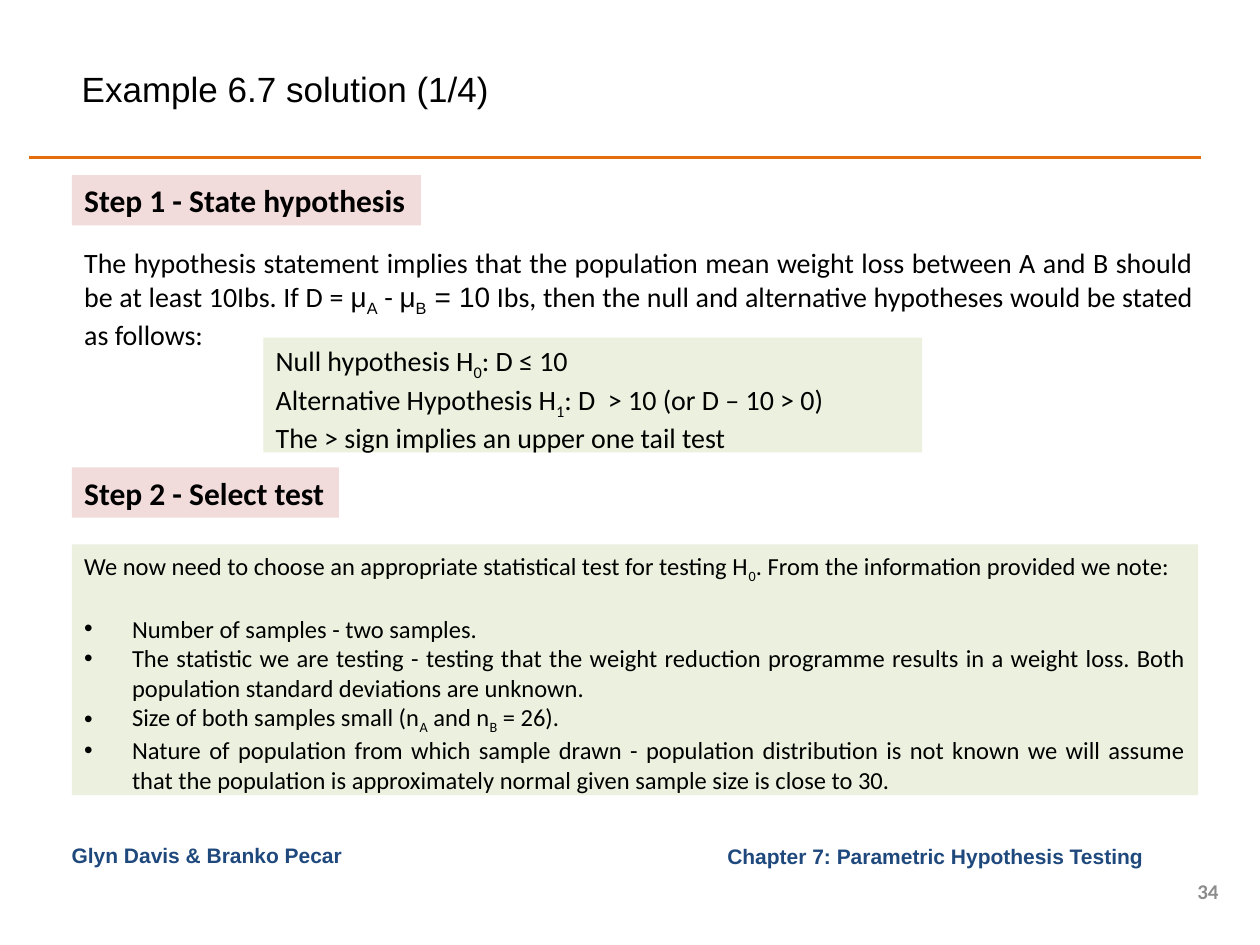
from lxml import etree
from pptx import Presentation, util as u
from pptx.dml.color import RGBColor
from pptx.enum import shapes, text
from pptx.oxml.ns import qn

W, H = 10, 7.5
EDGE = 0.57
INK, NAVY, GREY = "000000", "1F497D", "8C8C8C"
PINK, GREEN, ORANGE = "F2DCDB", "EBF1DE", "E46C0A"
LEFT, RIGHT, JUST = text.PP_ALIGN.LEFT, text.PP_ALIGN.RIGHT, text.PP_ALIGN.JUSTIFY
TOP, MID = text.MSO_ANCHOR.TOP, text.MSO_ANCHOR.MIDDLE

# "|" parts the runs, "_" lowers a run, "^" sets it in Arial
LABELS = [
    ("Chapter 7: Parametric Hypothesis Testing ", (3.75, 6.64, 5.47, 0.31), "Arial", 12, NAVY, True, RIGHT, MID),
    ("Example 6.7 solution (1/4)", (0.55, 0.31, 8.94, 0.78), "Arial", 20, INK, False, LEFT, MID),
    ("34", (9.3, 6.95, 0.47, 0.24), "Calibri", 12, GREY, True, RIGHT, MID),
    ("Glyn Davis & Branko Pecar", (0.47, 6.64, 2.97, 0.31), "Arial", 12, NAVY, True, LEFT, TOP),
]
STEPS = [
    ("Step 1 - State hypothesis", 1.39, 2.77),
    ("Step 2 - Select test", 3.71, 2.12),
]
INTRO = [
    "The hypothesis statement implies that the population mean weight loss between A and B "
    "should be at least 10Ibs. If D = |^μ|^_Α| - |^μ|^_Β|^ = 10| Ibs, then the null and "
    "alternative hypotheses would be stated as follows:",
]
CLAIMS = [
    "Null hypothesis H|_0|: D ≤ 10",
    "Alternative Hypothesis H|_1|: D  > 10 (or D – 10 > 0)",
    "The > sign implies an upper one tail test",
]
LEAD = "We now need to choose an appropriate statistical test for testing H|_0|. From the information provided we note:"
NOTES = [
    "Number of samples - two samples.",
    "The statistic we are testing - testing that the weight reduction programme results in a "
    "weight loss. Both population standard deviations are unknown.",
    "Size of both samples small (n|_A| and n|_B| = 26).",
    "Nature of population from which sample drawn - population distribution is not known we "
    "will assume that the population is approximately normal given sample size is close to 30.",
]


def color(code):
    return RGBColor.from_string(code)


def write(para, line, font, size, ink=INK, bold=False, align=LEFT):
    para.alignment = align
    for part in line.split("|"):
        body = part.lstrip("^_")
        mark = part[:len(part) - len(body)]
        run = para.add_run()
        run.text = body
        run.font.name = "Arial" if "^" in mark else font
        run.font.size = u.Pt(size)
        run.font.bold = bold
        run.font.color.rgb = color(ink)
        if "_" in mark:
            run.font._element.set("baseline", "-25000")


def block(slide, lines, at, font, size, ink=INK, bold=False, align=LEFT,
          anchor=TOP, fill=None, wrap=True):
    place = [u.Inches(n) for n in at]
    if fill:
        box = slide.shapes.add_shape(shapes.MSO_SHAPE.RECTANGLE, *place)
        box.shadow.inherit = False
        box.fill.solid()
        box.fill.fore_color.rgb = color(fill)
        box.line.fill.background()
    else:
        box = slide.shapes.add_textbox(*place)
    frame = box.text_frame
    frame.word_wrap = wrap
    frame.vertical_anchor = anchor
    for i, line in enumerate(lines):
        para = frame.add_paragraph() if i else frame.paragraphs[0]
        write(para, line, font, size, ink, bold, align)
    return frame.paragraphs


def bullet(para):
    props = para._p.get_or_add_pPr()
    step = u.Inches(0.38)
    props.set("marL", str(step))
    props.set("indent", str(-step))
    etree.SubElement(props, qn("a:buFont")).set("typeface", "Arial")
    etree.SubElement(props, qn("a:buChar")).set("char", "•")


def main():
    deck = Presentation()
    deck.slide_width, deck.slide_height = u.Inches(W), u.Inches(H)
    slide = deck.slides.add_slide(deck.slide_layouts[6])

    rule = slide.shapes.add_connector(
        shapes.MSO_CONNECTOR.STRAIGHT, *[u.Inches(n) for n in (0.23, 1.25, 9.53, 1.25)])
    rule.line.color.rgb = color(ORANGE)
    rule.line.width = u.Pt(2)
    etree.SubElement(rule._element.spPr, qn("a:effectLst"))

    for line, at, *look in LABELS:
        block(slide, [line], at, *look)
    for line, top, wide in STEPS:
        block(slide, [line], (EDGE, top, wide, 0.4), "Calibri", 18, bold=True, fill=PINK, wrap=False)
    block(slide, INTRO, (EDGE, 1.9, 9, 0.91), "Calibri", 16, align=JUST)
    block(slide, CLAIMS, (2.09, 2.68, 5.23, 0.91), "Calibri", 16, align=JUST, fill=GREEN)
    lead, *notes = block(slide, [LEAD] + NOTES, (EDGE, 4.32, 8.94, 1.99),
                         "Calibri", 14, align=JUST, fill=GREEN)
    lead.space_after = u.Pt(17)
    for para in notes:
        bullet(para)

    deck.save("out.pptx")


if __name__ == "__main__":
    main()
